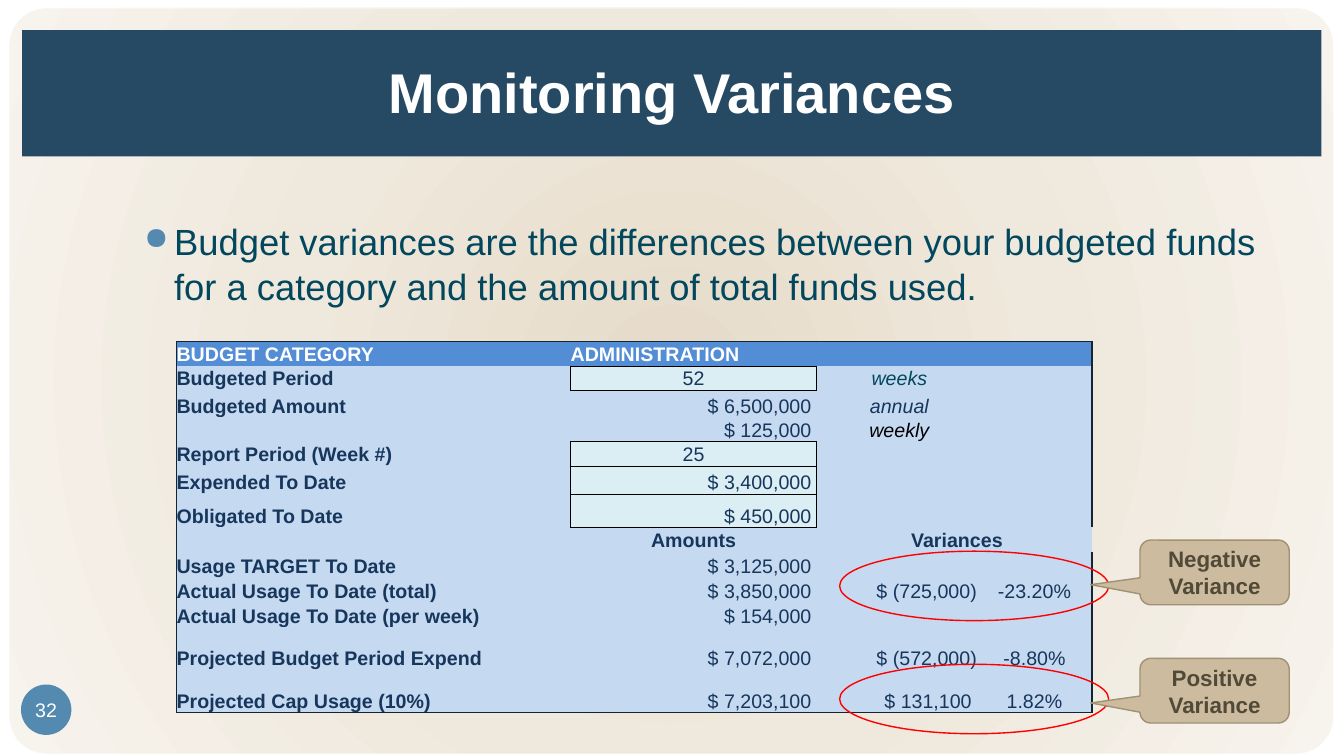
from dataclasses import dataclass
from lxml import etree
from pptx import Presentation
from pptx.dml.color import RGBColor
from pptx.enum import shapes, text
from pptx.oxml import parse_xml
from pptx.oxml.ns import nsdecls, qn
from pptx.util import Cm, Pt

HUE = {
    "white": "FFFFFF", "navy": "264A64", "disc": "548AB0", "body": "02475D",
    "head": "538DD5", "cell": "C5D9F1", "input": "DAEEF3", "ink": "16365C",
    "black": "000000", "frame": "132532", "red": "FF0000",
    "tan": "CCBB9E", "edge": "9E9273", "brown": "514A38",
}
NO_GRID = "{2D5ABB26-0587-4C30-8999-92F81FD0307C}"
KIND = shapes.MSO_SHAPE
MID = text.MSO_ANCHOR.MIDDLE
LEFT, MIDDLE, RIGHT = (text.PP_ALIGN.LEFT, text.PP_ALIGN.CENTER,
                       text.PP_ALIGN.RIGHT)
PAD = Cm(0.13)


@dataclass
class Line:
    label: str
    amount: str = ""
    note: str = ""
    rate: str = ""
    high: float = 0.61
    entry: bool = False
    tint: str = "ink"


@dataclass
class Callout:
    words: str
    top: float
    ring: float


LINES = [
    Line("BUDGET CATEGORY", "ADMINISTRATION", tint="white"),
    Line("Budgeted Period", "52", "weeks", entry=True, tint="body"),
    Line("Budgeted Amount", "$ 6,500,000", "annual", high=0.69),
    Line("", "$ 125,000", "weekly", tint="black"),
    Line("Report Period (Week #)", "25", entry=True),
    Line("Expended To Date", "$ 3,400,000", high=0.71, entry=True),
    Line("Obligated To Date", "$ 450,000", high=0.84, entry=True),
    Line("", "Amounts", "Variances"),
    Line("Usage TARGET To Date", "$ 3,125,000", high=0.66),
    Line("Actual Usage To Date (total)", "$ 3,850,000", "$ (725,000)",
         "-23.20%", 0.64),
    Line("Actual Usage To Date (per week)", "$ 154,000"),
    Line("Projected Budget Period Expend", "$ 7,072,000", "$ (572,000)",
         "-8.80%", 1.07),
    Line("Projected Cap Usage (10%)", "$ 7,203,100", "$ 131,100",
         "1.82%", 1.07),
]
WIDTHS = [9.93, 6.2, 4.04, 2.9]
CALLOUTS = [Callout("Negative Variance", 13.61, 13.89),
            Callout("Positive Variance", 16.59, 16.74)]


def rgb(name: str) -> RGBColor:
    return RGBColor.from_string(HUE[name])


def style(para, size: float, hue: str, bold=False, italic=False, align=LEFT):
    para.alignment = align
    font = para.font
    font.name, font.size = "Arial", Pt(size)
    font.bold, font.italic = bold, italic
    font.color.rgb = rgb(hue)


def shape(slide, kind, box, fill=None, line=None, width=1.0):
    item = slide.shapes.add_shape(kind, *map(Cm, box))
    item.shadow.inherit = False
    if fill:
        item.fill.solid()
        item.fill.fore_color.rgb = rgb(fill)
    else:
        item.fill.background()
    if line:
        item.line.color.rgb = rgb(line)
        item.line.width = Pt(width)
    else:
        item.line.fill.background()
    return item


def glow(item):
    """Fill a shape with a round gradient, darkest at its centre."""
    stops = "".join(
        f'<a:gs pos="{pos}"><a:srgbClr val="{hue}"/></a:gs>' for pos, hue in
        ((0, "E6DBC9"), (50000, "EFE8DC"), (100000, "F7F3ED")))
    grad = parse_xml(
        f'<a:gradFill {nsdecls("a")} rotWithShape="1"><a:gsLst>{stops}</a:gsLst>'
        '<a:path path="circle"><a:fillToRect l="50000" t="50000" r="50000" '
        'b="50000"/></a:path></a:gradFill>')
    props = item.fill._xPr
    props.replace(props.find(qn("a:noFill")), grad)


def border(cell, sides: dict):
    props = cell._tc.get_or_add_tcPr()
    for side in "LRTB":
        hue, width = sides.get(side, (None, 0))
        paint = (f'<a:solidFill><a:srgbClr val="{HUE[hue]}"/></a:solidFill>'
                 if hue else "<a:noFill/>")
        props.append(parse_xml(
            f'<a:ln{side} {nsdecls("a")} w="{Pt(width)}">{paint}</a:ln{side}>'))


def sides(row: int, col: int) -> dict:
    """Frame the table, and box each entry cell from both sides of its edges."""
    frame, rule = ("frame", 1), ("black", 0.5)
    last = len(LINES) - 1

    def entry(r, c):
        return c == 1 and 0 <= r <= last and LINES[r].entry

    near = {"L": (row, col - 1), "R": (row, col + 1),
            "T": (row - 1, col), "B": (row + 1, col)}
    out = {side: rule for side, spot in near.items()
           if entry(row, col) or entry(*spot)}
    rim = {"L": col == 0, "R": col == 3, "T": row == 0, "B": row == last}
    out.update({side: frame for side, hit in rim.items() if hit})
    return out


def fill_cell(cell, row: int, col: int):
    line = LINES[row]
    words = (line.label, line.amount, line.note, line.rate)[col]
    money = words.startswith("$")
    title = row == 0 or col == 0 or words in ("Amounts", "Variances")
    remark = col == 2 and not money
    align = (LEFT if row == 0 or col == 0 else RIGHT if money else MIDDLE)
    cell.margin_left = PAD if remark else 0
    cell.margin_right = PAD if money and not words.endswith(")") else 0
    cell.margin_top = cell.margin_bottom = 0
    cell.vertical_anchor = text.MSO_ANCHOR.BOTTOM
    para = cell.text_frame.paragraphs[0]
    if words:
        para.text = words
    else:
        etree.SubElement(para._p, qn("a:endParaRPr")).set("sz", "1400")
    hue = line.tint if row == 0 or remark else "ink"
    style(para, 14, hue, title, remark and not title, align)
    border(cell, sides(row, col))
    cell.fill.solid()
    cell.fill.fore_color.rgb = rgb(
        "head" if row == 0 else "input" if line.entry and col == 1 else "cell")


def budget(slide):
    tall = sum(line.high for line in LINES)
    frame = slide.shapes.add_table(len(LINES), len(WIDTHS), Cm(4.45), Cm(8.61),
                                   Cm(sum(WIDTHS)), Cm(tall))
    grid = frame.table
    grid._tbl.tblPr.find(qn("a:tableStyleId")).text = NO_GRID
    grid.first_row = grid.horz_banding = False
    for col, wide in zip(grid.columns, WIDTHS):
        col.width = Cm(wide)
    for row, line in enumerate(LINES):
        grid.rows[row].height = Cm(line.high)
        for col in range(len(WIDTHS)):
            fill_cell(grid.cell(row, col), row, col)
        if line.note == "Variances":
            grid.cell(row, 2).merge(grid.cell(row, 3))


def heading(slide):
    title = slide.shapes.title
    title.left, title.top, title.width, title.height = map(
        Cm, (0.56, 0.76, 32.74, 3.18))
    title.fill.solid()
    title.fill.fore_color.rgb = rgb("navy")
    frame = title.text_frame
    frame.text = "Monitoring Variances"
    frame.vertical_anchor = MID
    frame.margin_bottom = Cm(0.25)
    style(frame.paragraphs[0], 40, "white", True, align=MIDDLE)


def bullet(slide):
    box = slide.shapes.add_textbox(*map(Cm, (3.38, 5.33, 28.78, 2.6)))
    frame = box.text_frame
    frame.word_wrap = True
    para = frame.paragraphs[0]
    para.text = ("Budget variances are the differences between your budgeted "
                 "funds for a category and the amount of total funds used.")
    para.line_spacing = 1.05
    props = para._p.get_or_add_pPr()
    props.set("marL", str(Cm(0.76)))
    props.set("indent", str(Cm(-0.76)))
    for mark in (f'<a:buClr {nsdecls("a")}><a:srgbClr val="{HUE["disc"]}"/>'
                 '</a:buClr>',
                 f'<a:buSzPct {nsdecls("a")} val="85000"/>',
                 f'<a:buChar {nsdecls("a")} char="●"/>'):
        props.append(parse_xml(mark))
    style(para, 26, "body")


def label(item, words: str, size: float, hue: str, bold=False):
    frame = item.text_frame
    frame.text = words
    frame.vertical_anchor = MID
    style(frame.paragraphs[0], size, hue, bold, align=MIDDLE)
    return frame


def main():
    deck = Presentation()
    deck.slide_width, deck.slide_height = Cm(33.87), Cm(19.05)
    slide = deck.slides.add_slide(deck.slide_layouts[5])
    back = shape(slide, KIND.ROUNDED_RECTANGLE, (0.23, 0.2, 33.38, 18.8),
                 line="white", width=0.5)
    back.adjustments[0] = 0.05
    glow(back)
    slide.shapes._spTree.insert(2, back._element)
    heading(slide)
    disc = shape(slide, KIND.OVAL, (0.53, 17.25, 1.27, 1.27), "disc")
    frame = label(disc, "32", 14, "white")
    frame.word_wrap = False
    frame.margin_left = frame.margin_right = 0
    frame.margin_top = frame.margin_bottom = 0
    bullet(slide)
    budget(slide)
    for call in CALLOUTS:
        shape(slide, KIND.OVAL, (21.16, call.ring, 6.78, 1.75), line="red")
        note = shape(slide, KIND.ROUNDED_RECTANGULAR_CALLOUT,
                     (28.73, call.top, 3.76, 1.63), "tan", "edge")
        note.adjustments[0], note.adjustments[1] = -0.83, 0.19
        label(note, call.words, 16, "brown", True)


    deck.save("out.pptx")


if __name__ == "__main__":
    main()
